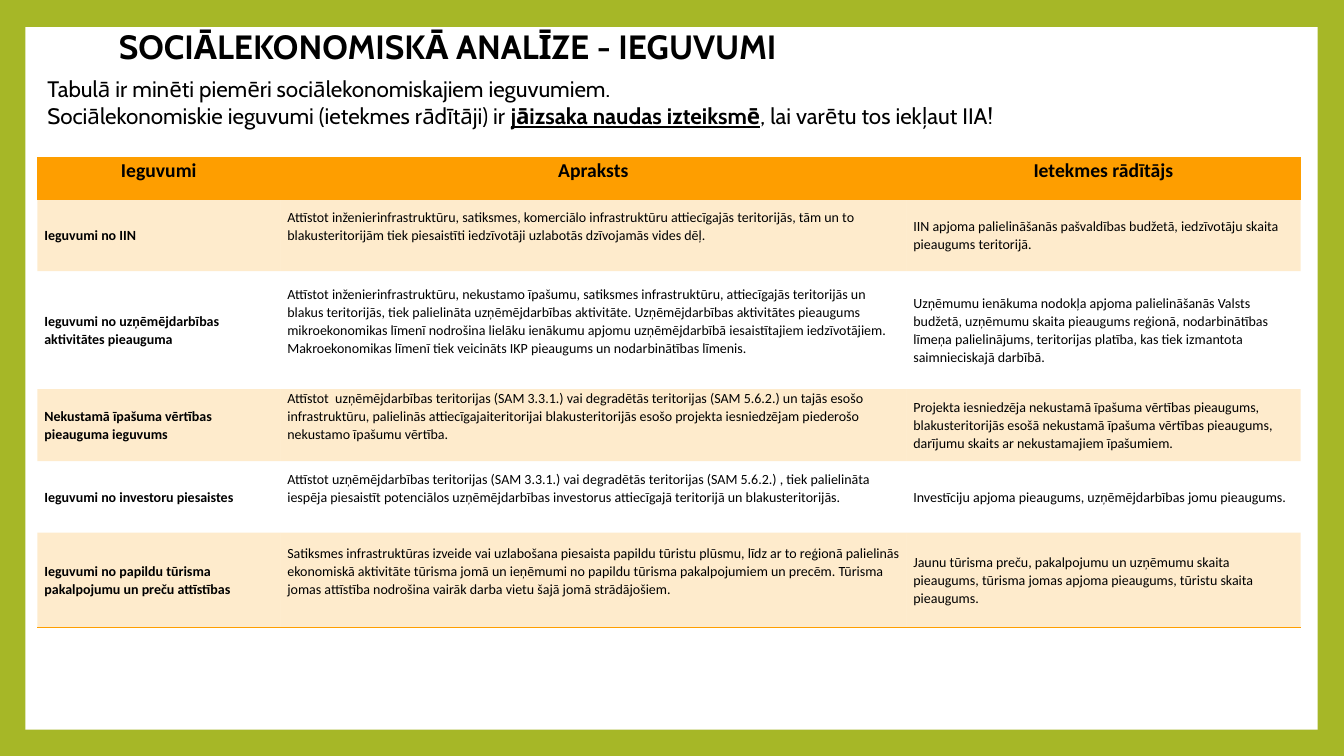
import pptx
import pptx.dml.color
import pptx.enum.shapes
import pptx.enum.text
import pptx.oxml
import pptx.oxml.ns
import pptx.util
from dataclasses import dataclass


@dataclass(frozen=True)
class Theme:
    green: str = "A6B727"
    orange: str = "FE9E00"
    white: str = "FFFFFF"
    black: str = "000000"
    heading_font: str = "Cabin"
    table_font: str = "Calibri"
    title_size: int = 24
    intro_size: int = 16
    header_size: int = 14
    body_size: int = 10


theme = Theme()
rgb = pptx.dml.color.RGBColor.from_string
MIDDLE = pptx.enum.text.MSO_ANCHOR.MIDDLE
NO_GRID_STYLE = "{2D5ABB26-0587-4C30-8999-92F81FD0307C}"

INTRO = [
    [("Tabulā ir minēti piemēri sociālekonomiskajiem ieguvumiem.", False)],
    [("Sociālekonomiskie ieguvumi (ietekmes rādītāji) ir ", False),
     ("jāizsaka naudas izteiksmē", True),
     (", lai varētu tos iekļaut IIA!", False)],
]
ROWS = [
    ("Ieguvumi", "Apraksts", "Ietekmes rādītājs"),
    ("Ieguvumi no IIN",
     "Attīstot inženierinfrastruktūru, satiksmes, komerciālo infrastruktūru attiecīgajās "
     "teritorijās, tām un to blakusteritorijām tiek piesaistīti iedzīvotāji uzlabotās "
     "dzīvojamās vides dēļ.",
     "IIN apjoma palielināšanās pašvaldības budžetā, iedzīvotāju skaita pieaugums teritorijā."),
    ("Ieguvumi no uzņēmējdarbības aktivitātes pieauguma",
     "Attīstot inženierinfrastruktūru, nekustamo īpašumu, satiksmes infrastruktūru, "
     "attiecīgajās teritorijās un blakus teritorijās, tiek palielināta uzņēmējdarbības "
     "aktivitāte. Uzņēmējdarbības aktivitātes pieaugums mikroekonomikas līmenī nodrošina "
     "lielāku ienākumu apjomu uzņēmējdarbībā iesaistītajiem iedzīvotājiem. Makroekonomikas "
     "līmenī tiek veicināts IKP pieaugums un nodarbinātības līmenis.",
     "Uzņēmumu ienākuma nodokļa apjoma palielināšanās Valsts budžetā, uzņēmumu skaita "
     "pieaugums reģionā, nodarbinātības līmeņa palielinājums, teritorijas platība, kas tiek "
     "izmantota saimnieciskajā darbībā."),
    ("Nekustamā īpašuma vērtības pieauguma ieguvums",
     "Attīstot  uzņēmējdarbības teritorijas (SAM 3.3.1.) vai degradētās teritorijas "
     "(SAM 5.6.2.) un tajās esošo infrastruktūru, palielinās attiecīgajaiteritorijai "
     "blakusteritorijās esošo projekta iesniedzējam piederošo nekustamo īpašumu vērtība.",
     "Projekta iesniedzēja nekustamā īpašuma vērtības pieaugums, blakusteritorijās esošā "
     "nekustamā īpašuma vērtības pieaugums, darījumu skaits ar nekustamajiem īpašumiem."),
    ("Ieguvumi no investoru piesaistes",
     "Attīstot uzņēmējdarbības teritorijas (SAM 3.3.1.) vai degradētās teritorijas "
     "(SAM 5.6.2.) , tiek palielināta iespēja piesaistīt potenciālos uzņēmējdarbības "
     "investorus attiecīgajā teritorijā un blakusteritorijās.",
     "Investīciju apjoma pieaugums, uzņēmējdarbības jomu pieaugums."),
    ("Ieguvumi no papildu tūrisma pakalpojumu un preču attīstības",
     "Satiksmes infrastruktūras izveide vai uzlabošana piesaista papildu tūristu plūsmu, "
     "līdz ar to reģionā palielinās ekonomiskā aktivitāte tūrisma jomā un ieņēmumi no "
     "papildu tūrisma pakalpojumiem un precēm. Tūrisma jomas attīstība nodrošina vairāk "
     "darba vietu šajā jomā strādājošiem.",
     "Jaunu tūrisma preču, pakalpojumu un uzņēmumu skaita pieaugums, tūrisma jomas apjoma "
     "pieaugums, tūristu skaita pieaugums."),
]
# Percent of the slide's width and height
COLUMN_SHARES = [18.08, 46.58, 29.33]
ROW_SHARES = [5.6, 9.47, 15.6, 9.47, 9.47, 12.53]

prs = pptx.Presentation()
prs.slide_width = pptx.util.Inches(13.33)
prs.slide_height = pptx.util.Inches(7.5)


def box(left, top, width, height):
    """Turn percentages of the slide's size into left, top, width and height."""
    w, h = prs.slide_width / 100, prs.slide_height / 100
    return int(left * w), int(top * h), int(width * w), int(height * h)


def style_run(r, font, size, bold=False):
    r.font.name = font
    r.font.size = pptx.util.Pt(size)
    r.font.bold = bold
    r.font.color.rgb = rgb(theme.black)


s = prs.slides.add_slide(prs.slide_layouts[5])
s.background.fill.solid()
s.background.fill.fore_color.rgb = rgb(theme.green)

# White panel behind the title
title = s.shapes.title
panel = s.shapes.add_shape(pptx.enum.shapes.MSO_SHAPE.RECTANGLE, *box(1.88, 3.6, 96.15, 92.93))
panel.shadow.inherit = False
panel.fill.solid()
panel.fill.fore_color.rgb = rgb(theme.white)
panel.line.fill.background()
title.element.addprevious(panel.element)

# Title
title.left, title.top, title.width, title.height = box(8.1, 3.6, 87, 5.73)
tf = title.text_frame
tf.text = "SOCIĀLEKONOMISKĀ ANALĪZE - IEGUVUMI"
tf.auto_size = pptx.enum.text.MSO_AUTO_SIZE.NONE
tf.vertical_anchor = MIDDLE
p = tf.paragraphs[0]
p.alignment = pptx.enum.text.PP_ALIGN.LEFT
p.line_spacing = 0.9
style_run(p.runs[0], theme.heading_font, theme.title_size, bold=True)

# Introduction
tf = s.shapes.add_textbox(*box(2.78, 9.33, 91.35, 15.73)).text_frame
tf.word_wrap = True
for i, pieces in enumerate(INTRO):
    p = tf.add_paragraph() if i else tf.paragraphs[0]
    for text, strong in pieces:
        r = p.add_run()
        r.text = text
        style_run(r, theme.heading_font, theme.intro_size, bold=strong)
        r.font.underline = strong

# Table of benefits
frame = s.shapes.add_table(len(ROWS), len(COLUMN_SHARES),
                           *box(2.78, 20.8, sum(COLUMN_SHARES), sum(ROW_SHARES)))
frame.element.find(".//" + pptx.oxml.ns.qn("a:tableStyleId")).text = NO_GRID_STYLE
table = frame.table
table.horz_banding = False
for column, share in zip(table.columns, COLUMN_SHARES):
    column.width = int(prs.slide_width * share / 100)
for row, share in zip(table.rows, ROW_SHARES):
    row.height = int(prs.slide_height * share / 100)

for i, texts in enumerate(ROWS):
    header = i == 0
    edges = ["lnT", "lnB"] if header else ["lnB"] if i == len(ROWS) - 1 else []
    for j, text in enumerate(texts):
        cell = table.cell(i, j)
        cell.text = text
        cell.margin_left = cell.margin_right = pptx.util.Inches(0.07)
        cell.margin_top = cell.margin_bottom = 0
        p = cell.text_frame.paragraphs[0]
        p.line_spacing = 1.07
        if header:
            p.alignment = pptx.enum.text.PP_ALIGN.CENTER
        else:
            cell.vertical_anchor = MIDDLE
            if j == 1:
                cell.margin_bottom = pptx.util.Inches(0.18)
        style_run(p.runs[0], theme.table_font,
                  theme.header_size if header else theme.body_size, bold=header or j == 0)

        tc_pr = cell._tc.get_or_add_tcPr()
        for edge in edges:
            tc_pr.append(pptx.oxml.parse_xml(
                f'<a:{edge} {pptx.oxml.ns.nsdecls("a")} w="12700"><a:solidFill>'
                f'<a:srgbClr val="{theme.orange}"/></a:solidFill></a:{edge}>'))
        if header or i % 2:
            cell.fill.solid()
            cell.fill.fore_color.rgb = rgb(theme.orange)
        else:
            cell.fill.background()
        if i % 2:
            color = tc_pr.find(pptx.oxml.ns.qn("a:solidFill"))[0]
            color.append(pptx.oxml.parse_xml(
                f'<a:alpha {pptx.oxml.ns.nsdecls("a")} val="20000"/>'))

prs.save("out.pptx")
